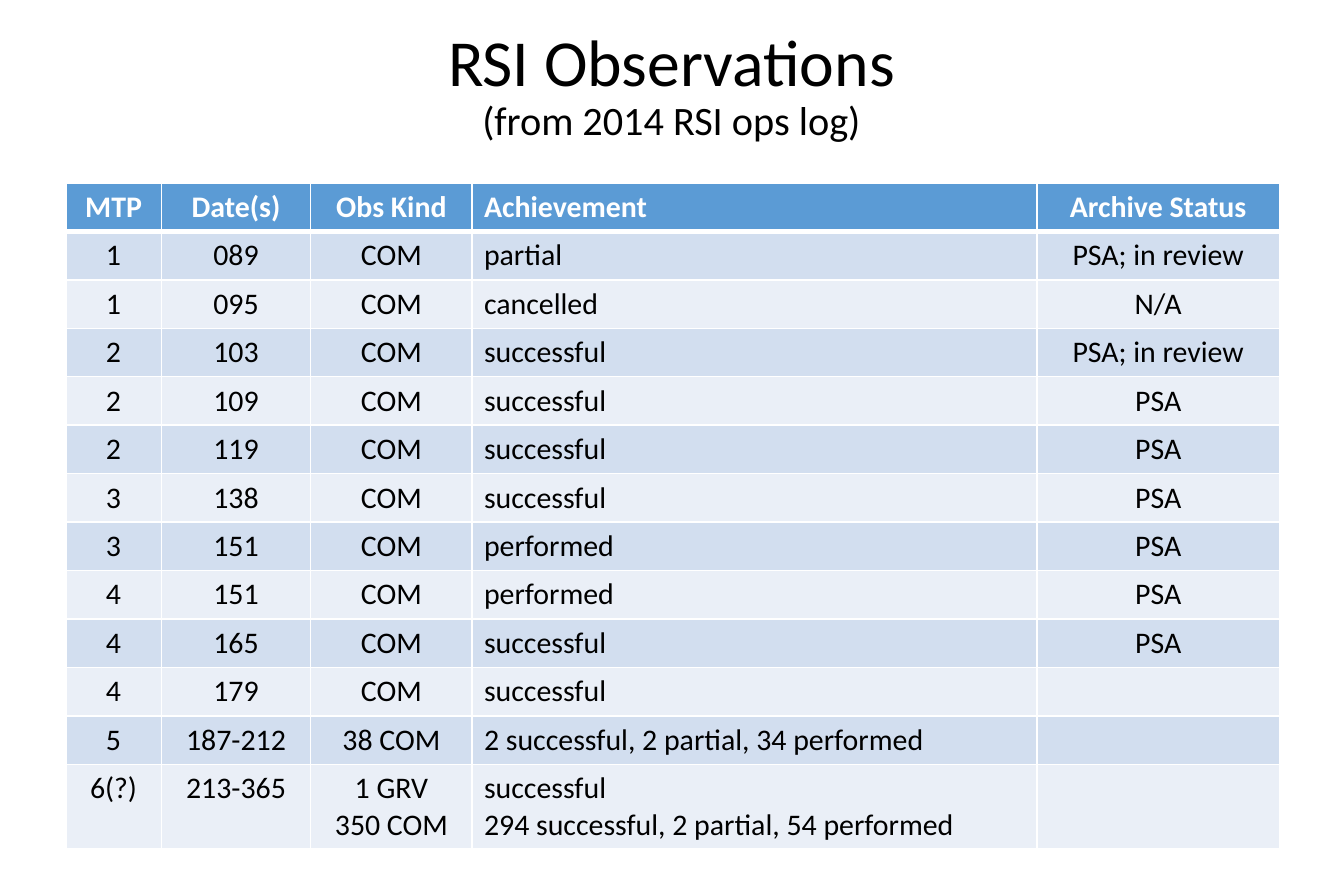
import pptx
import pptx.util
import pptx.dml.color
import pptx.enum.text
import pptx.oxml.ns
import lxml.etree

Cm = pptx.util.Cm
Pt = pptx.util.Pt
qn = pptx.oxml.ns.qn
PP_ALIGN = pptx.enum.text.PP_ALIGN

FONT = "Calibri"
BLACK, WHITE = "000000", "FFFFFF"
HEADER_FILL = "5B9BD5"
BAND_FILLS = ["D2DEEF", "EAEFF7"]

COL_WIDTHS = [2.03, 3.18, 3.43, 12.01, 5.16]
ACHIEVEMENT_COL = 3
ROW_HEIGHT, LAST_ROW_HEIGHT = 1.03, 1.8

HEADER = ["MTP", "Date(s)", "Obs Kind", "Achievement", "Archive Status"]
OBSERVATIONS = [
    ["1", "089", "COM", "partial", "PSA; in review"],
    ["1", "095", "COM", "cancelled", "N/A"],
    ["2", "103", "COM", "successful", "PSA; in review"],
    ["2", "109", "COM", "successful", "PSA"],
    ["2", "119", "COM", "successful", "PSA"],
    ["3", "138", "COM", "successful", "PSA"],
    ["3", "151", "COM", "performed", "PSA"],
    ["4", "151", "COM", "performed", "PSA"],
    ["4", "165", "COM", "successful", "PSA"],
    ["4", "179", "COM", "successful", ""],
    ["5", "187-212", "38 COM", "2 successful, 2 partial, 34 performed", ""],
    ["6(?)", "213-365", "1 GRV\n350 COM",
     "successful\n294 successful, 2 partial, 54 performed", ""],
]


def rgb(value):
    return pptx.dml.color.RGBColor.from_string(value)


def add_text(p, text, size=18, color=BLACK, bold=False, align=PP_ALIGN.CENTER):
    p.alignment = align
    r = p.add_run()
    r.text = text
    r.font.name = FONT
    r.font.size = Pt(size)
    r.font.bold = bold
    r.font.color.rgb = rgb(color)


def add_break(p, size):
    """Break the line, keeping the line height of the given text size."""
    p.add_line_break()
    br = p._p.findall(qn("a:br"))[-1]
    lxml.etree.SubElement(br, qn("a:rPr"), sz=str(round(size * 100)))


def set_borders(cell, **widths):
    """Draw white borders; the keywords L, R, T and B give widths in points."""
    tcPr = cell._tc.get_or_add_tcPr()
    for side, width in widths.items():
        ln = lxml.etree.SubElement(tcPr, qn(f"a:ln{side}"), w=str(Pt(width)))
        fill = lxml.etree.SubElement(ln, qn("a:solidFill"))
        lxml.etree.SubElement(fill, qn("a:srgbClr"), val=WHITE)


def fill_title(sp):
    sp.left, sp.top, sp.width, sp.height = Cm(1.96), Cm(0.38), Cm(24.64), Cm(2.95)
    tf = sp.text_frame
    tf.auto_size = pptx.enum.text.MSO_AUTO_SIZE.NONE
    tf.vertical_anchor = pptx.enum.text.MSO_ANCHOR.MIDDLE
    p = tf.paragraphs[0]
    p.line_spacing = 0.9
    add_text(p, "RSI Observations", size=39.6)
    add_break(p, 39.6)
    add_text(p, "(from 2014 RSI ops log)", size=24.3)


def fill_cell(cell, text, fill, **text_format):
    cell.fill.solid()
    cell.fill.fore_color.rgb = rgb(fill)
    tf = cell.text_frame
    for i, line in enumerate(text.split("\n") if text else []):
        p = tf.add_paragraph() if i else tf.paragraphs[0]
        add_text(p, line, **text_format)


def add_observations(s):
    rows = [HEADER] + OBSERVATIONS
    heights = [ROW_HEIGHT] * len(OBSERVATIONS) + [LAST_ROW_HEIGHT]
    table = s.shapes.add_table(
        len(rows), len(HEADER), Cm(1.4), Cm(3.89),
        Cm(sum(COL_WIDTHS)), Cm(sum(heights))).table
    for col, width in zip(table.columns, COL_WIDTHS):
        col.width = Cm(width)

    for i, (row, height) in enumerate(zip(rows, heights)):
        table.rows[i].height = Cm(height)
        is_header = i == 0
        fill = HEADER_FILL if is_header else BAND_FILLS[(i - 1) % 2]
        for j, text in enumerate(row):
            cell = table.cell(i, j)
            # The rule under the header is thicker than the others
            set_borders(cell, L=1, R=1, T=3 if i == 1 else 1, B=3 if is_header else 1)
            fill_cell(cell, text, fill, bold=is_header,
                      color=WHITE if is_header else BLACK,
                      align=PP_ALIGN.LEFT if j == ACHIEVEMENT_COL else PP_ALIGN.CENTER)


def main():
    prs = pptx.Presentation()
    prs.slide_width, prs.slide_height = Cm(28.58), Cm(19.05)
    s = prs.slides.add_slide(prs.slide_layouts[5])

    # Title with subtitle
    fill_title(s.shapes.title)

    # Table of observations
    add_observations(s)

    prs.save("out.pptx")


if __name__ == "__main__":
    main()
